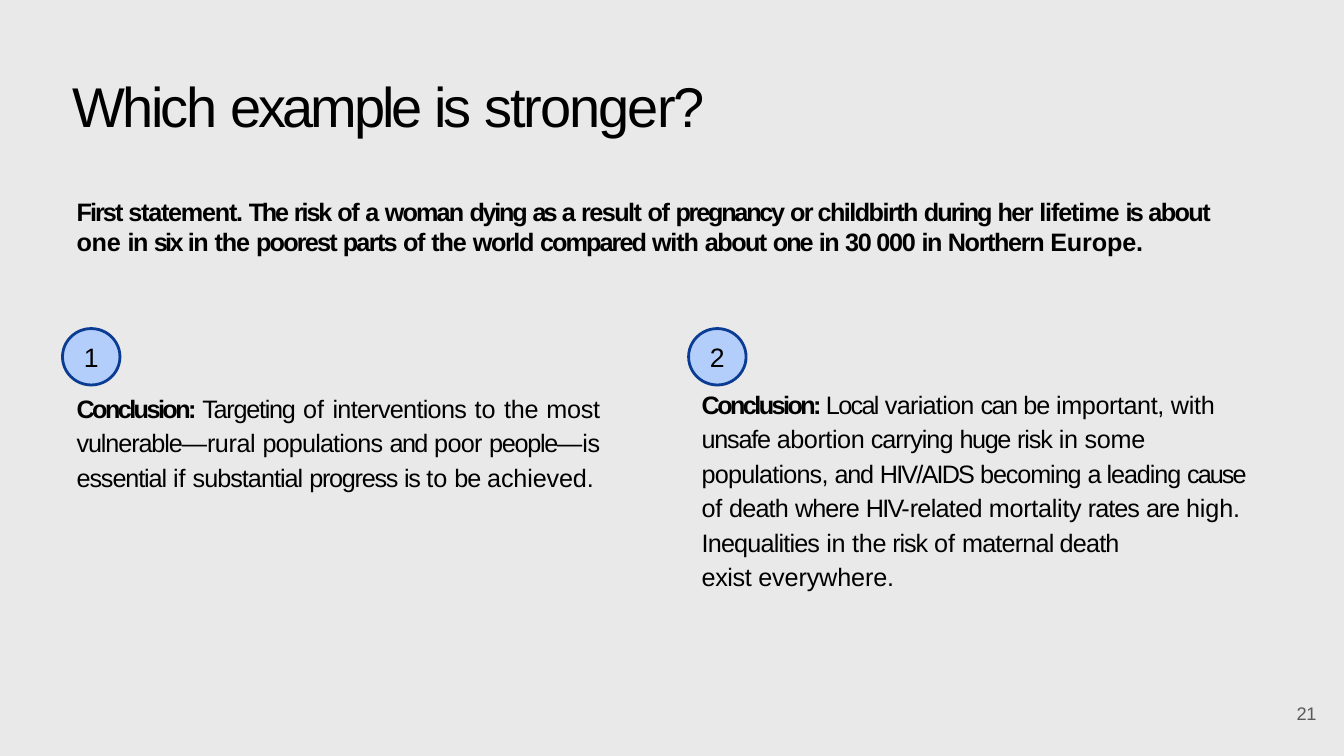
import pptx
import pptx.dml.color
import pptx.enum.shapes
import pptx.enum.text
import pptx.util

Inches = pptx.util.Inches
Pt = pptx.util.Pt
ALIGN = pptx.enum.text.PP_ALIGN
SHAPE = pptx.enum.shapes.MSO_SHAPE
FONT = "Arial"
BLACK = "000000"

# Each phrase is (text, letter spacing in points); "\n" ends a line
TITLE = [("Which ", -1.9), ("example ", -2.3), ("is ", -2.4), ("stronger?", -1.4)]
STATEMENT = [
    ("First ", -1.4), ("statement. ", -0.9), ("The ", -1.6), ("risk ", -1.5),
    ("of ", -1), ("a ", -1.2), ("woman ", -1.3), ("dying ", -1.6),
    ("as ", -2.1), ("a ", -1.2), ("result ", -1.1), ("of ", -1),
    ("pregnancy ", -1.6), ("or childbirth ", -1.1), ("during ", -1.4),
    ("her ", -1.1), ("lifetime ", -0.8), ("is ", -1.9), ("about ", -1.1),
    ("one ", -0.2), ("in ", -1.1), ("six ", -1.9), ("in", -1.1),
    (" the ", -0.8), ("poorest ", -1.3), ("parts ", -1.2), ("of ", -0.9),
    ("the ", -0.8), ("world ", -1), ("compared ", -1.4), ("with ", -0.8),
    ("about ", -1.1), ("one ", -1.4), ("in ", -1.1), ("30 000 ", -0.9),
    ("in ", -1.1), ("Northern ", -1), ("Europe.", -0.1),
]
LABEL = "Conclusion: "
TARGETING = [
    ("Targeting ", -0.9), ("of ", 0), ("interventions ", -0.5), ("to ", 0),
    ("the most ", -0.2), ("vulnerable—", -0.8), ("rural ", -0.3),
    ("populations ", -0.6), ("and ", -1.1), ("poor ", -0.5),
    ("people—", -0.9), ("is ", -0.2), ("essential ", -0.8), ("if ", 0),
    ("substantial ", -0.7), ("progress ", -0.9), ("is ", -1.1), ("to ", 0),
    ("be ", -0.8), ("achieved.", -0.1),
]
VARIATION = [
    ("Local ", -1.2), ("variation ", -0.5), ("can ", -1.2), ("be ", -0.8),
    ("important, ", -0.3), ("with ", -0.2), ("unsafe ", -0.9),
    ("abortion", -0.3), (" carrying ", -0.7), ("huge ", -1), ("risk ", -0.8),
    ("in some ", -0.2), ("populations, ", -0.6), ("and ", -0.9),
    ("HIV/AIDS ", -1.3), ("becoming ", -0.8), ("a ", -1.4),
    ("leading ", -0.8), ("cause ", -1.4), ("of ", -0.2), ("death ", -0.6),
    ("where ", -0.7), ("HIV-", -1.2), ("related ", -0.5),
    ("mortality", -0.2), (" rates ", -0.7), ("are ", -0.8), ("high.", -0.1),
]
INEQUALITIES = [
    ("Inequalities ", -0.6), ("in the", -0.2), (" risk ", -0.8), ("of ", 0),
    ("maternal death\n", -0.6), ("exist ", -0.3), ("everywhere.", -0.1),
]


def rgb(value):
    return pptx.dml.color.RGBColor.from_string(value)


def add_run(p, text, size=18, color=BLACK, bold=False, spacing=0):
    r = p.add_run()
    r.text = text.rstrip("\n")
    r.font.name = FONT
    r.font.size = Pt(size)
    r.font.bold = bold
    r.font.color.rgb = rgb(color)
    r.font._element.set("spc", str(round(spacing * 100)))
    if text.endswith("\n"):
        p.add_line_break()


def write(p, phrases, label=None, align=ALIGN.LEFT, line_spacing=None, **style):
    p.alignment = align
    p.line_spacing = line_spacing
    if label:
        add_run(p, label, bold=True, spacing=-1.85)
    for text, spacing in phrases:
        add_run(p, text, spacing=spacing, **style)


def clear_margins(tf):
    tf.word_wrap = True
    tf.margin_left = tf.margin_right = tf.margin_top = tf.margin_bottom = 0


def add_text(slide, left, top, width, height, paragraphs, **style):
    sp = slide.shapes.add_textbox(Inches(left), Inches(top),
                                  Inches(width), Inches(height))
    tf = sp.text_frame
    clear_margins(tf)
    for i, phrases in enumerate(paragraphs):
        p = tf.add_paragraph() if i else tf.paragraphs[0]
        write(p, phrases, **style)
        style.pop("label", None)


def add_filled(slide, shape, left, top, width, height, fill):
    sp = slide.shapes.add_shape(shape, Inches(left), Inches(top),
                                Inches(width), Inches(height))
    sp.shadow.inherit = False
    sp.fill.solid()
    sp.fill.fore_color.rgb = rgb(fill)
    sp.line.fill.background()
    return sp


def add_badge(slide, left, number):
    sp = add_filled(slide, SHAPE.OVAL, left, 3.26, 0.57, 0.56, "B3CEFB")
    sp.line.color.rgb = rgb("093C92")
    sp.line.width = Pt(2)
    tf = sp.text_frame
    clear_margins(tf)
    tf.vertical_anchor = pptx.enum.text.MSO_ANCHOR.MIDDLE
    write(tf.paragraphs[0], [(number, -0.5)], align=ALIGN.CENTER, size=19)


def main():
    prs = pptx.Presentation()
    prs.slide_width = Inches(13.33)
    prs.slide_height = Inches(7.5)
    slide = prs.slides.add_slide(prs.slide_layouts[6])

    # Grey backdrop
    add_filled(slide, SHAPE.RECTANGLE, 0, 0, 13.33, 7.5, "E9E9E9")

    # Title and shared statement
    add_text(slide, 0.72, 0.71, 10.4, 0.66, [TITLE], size=40)
    add_text(slide, 0.76, 1.96, 11.61, 0.6, [STATEMENT], bold=True,
             line_spacing=Pt(21.1))

    # Two competing conclusions
    add_badge(slide, 0.62, "1")
    add_text(slide, 0.76, 3.86, 5.19, 1.4, [TARGETING], label=LABEL,
             align=ALIGN.JUSTIFY, line_spacing=1.14)
    add_badge(slide, 6.83, "2")
    add_text(slide, 6.96, 3.82, 5.58, 2.07, [VARIATION, INEQUALITIES],
             label=LABEL, line_spacing=1.14)

    # Slide number
    add_text(slide, 12.86, 6.97, 0.24, 0.25, [[("21", -0.2)]], size=13,
             color="595959")

    prs.save("out.pptx")


if __name__ == "__main__":
    main()
